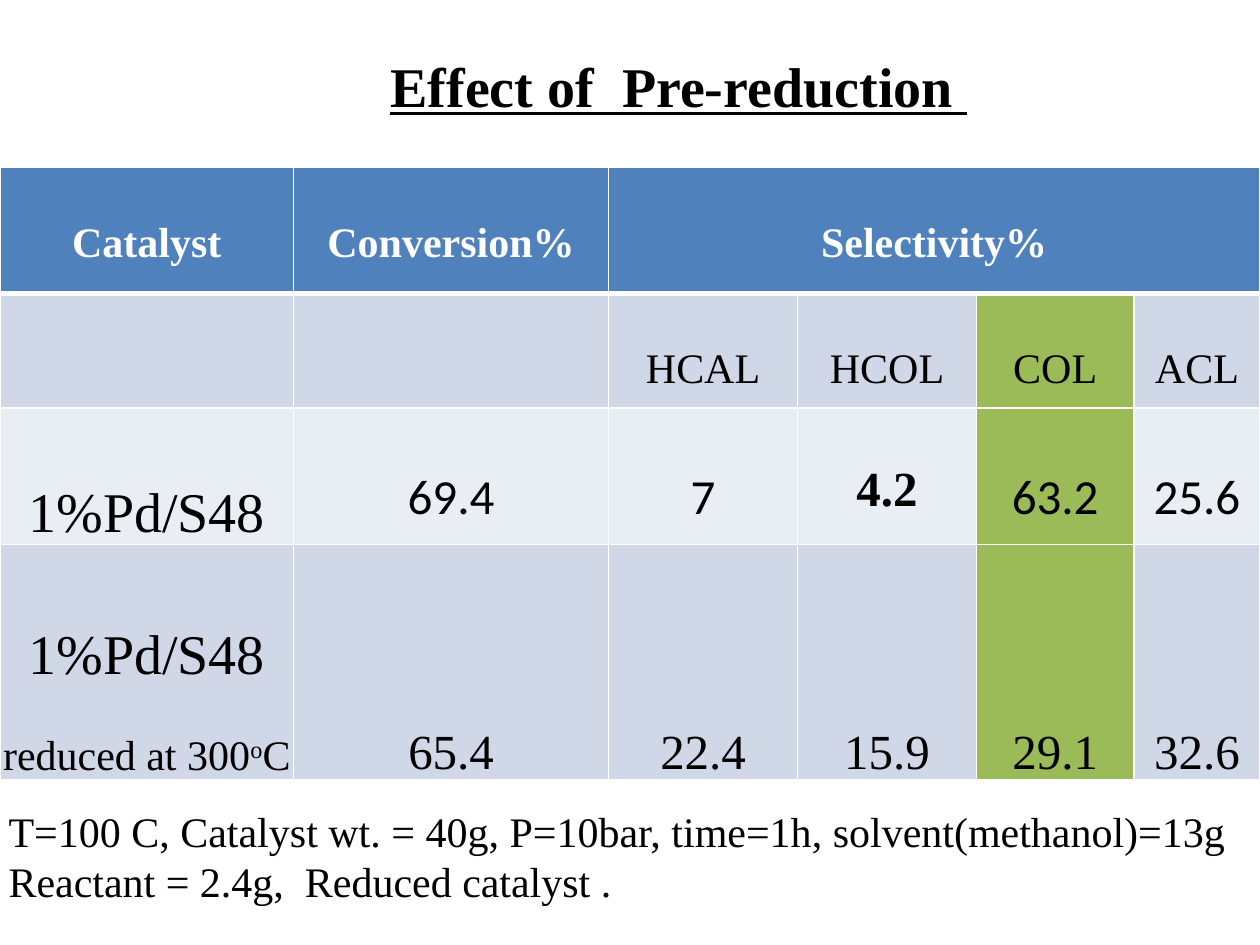
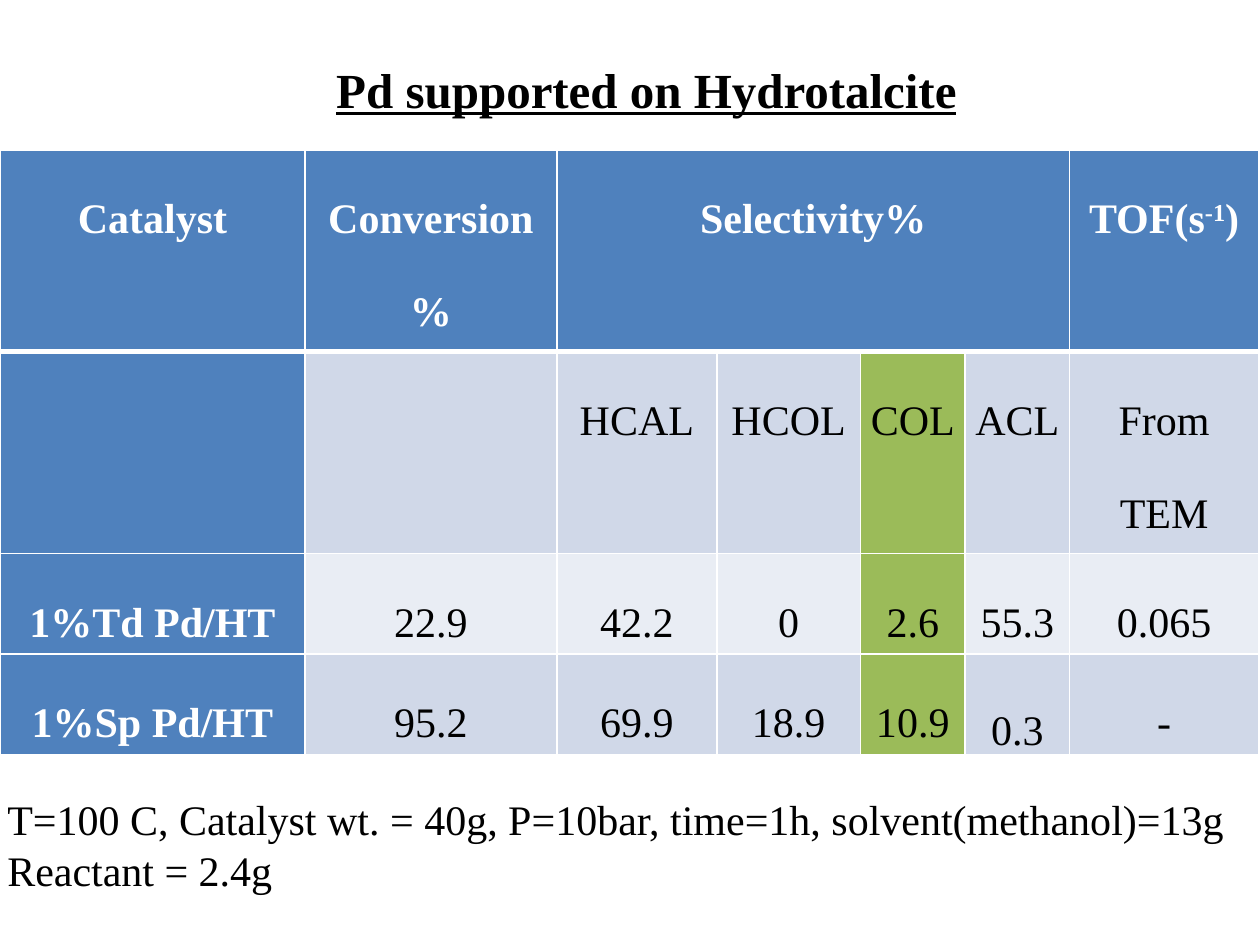
from lxml import etree
from pptx import Presentation
from pptx import util as u
from pptx.dml.color import RGBColor
from pptx.enum import text
from pptx.oxml.ns import qn

COLORS = {"header": "4F81BD", "band": "D0D8E8", "light": "E9EDF4",
          "highlight": "9BBB59", "white": "FFFFFF", "black": "000000"}
SERIF, SANS = "Times New Roman", "Calibri"
HIGHLIGHTED = "COL"
CATALYST = "1%Pd/S48"
CONDITIONS = "T=100 C, Catalyst wt. = 40g, P=10bar, time=1h, solvent(methanol)=13g"
TIGHT = (0.01, 0.01, 0.01, 0)
SIDES = (0.07, 0, 0.07, 0)
SPACED = {"after": 10}
PADDED = {"inset": SIDES}
BOTTOM = {"inset": TIGHT, "after": 10, "anchor": "b", "size": 28}

# A cell is a string, or a (content, format) pair. Content may be a list of
# (run, format) pairs. None marks a cell that the header to its left covers.
SLIDES = [
    {
        "title": ("Effect of  Pre-reduction ", 32, (3, 0.36, 4.82, 0.64)),
        "notes": ([CONDITIONS, "Reactant = 2.4g,  Reduced catalyst ."],
                  (-0.03, 6.34, 9.94, 0.91)),
        "top": 1.33,
        "columns": [2.33, 2.5, 1.5, 1.42, 1.25, 1],
        "heights": [1, 0.91, 1.08, 1.87],
        "row_formats": [SPACED, SPACED, {**PADDED, "size": 28, "font": SANS}, BOTTOM],
        "first_column_header": False,
        "rows": [
            ["Catalyst", "Conversion%", "Selectivity%", None, None, None],
            ["", "", "HCAL", "HCOL", "COL", "ACL"],
            [(CATALYST, {**BOTTOM, "size": 32, "font": SERIF}), "69.4", "7",
             ("4.2", {"font": SERIF, "bold": True}), "63.2", "25.6"],
            [[(CATALYST + " ", {"size": 32}), ("reduced at 300", {"size": 24}),
              ("o", {"size": 24, "raised": True}), ("C", {"size": 24})],
             "65.4", "22.4", "15.9", "29.1", "32.6"],
        ],
    },
    {
        "title": ("Pd supported on Hydrotalcite", 28, (2.57, 0.42, 5.18, 0.57)),
        "notes": ([CONDITIONS, "Reactant = 2.4g"], (-0.04, 6.25, 9.94, 0.91)),
        "top": 1.19,
        "columns": [2.42, 2, 1.27, 1.14, 0.83, 0.83, 1.5],
        "heights": [1.6, 1.6, 0.8, 0.8],
        "row_formats": [PADDED] * 4,
        "first_column_header": True,
        "rows": [
            ["Catalyst", "Conversion%", "Selectivity%", None, None, None,
             [("TOF(s", {}), ("-1", {"raised": True}), (")", {})]],
            ["", "", "HCAL", "HCOL", "COL", "ACL", "From TEM"],
            ["1%Td Pd/HT", "22.9", "42.2", "0", "2.6", "55.3", "0.065"],
            ["1%Sp Pd/HT", "95.2", "69.9", "18.9", "10.9", ("0.3", {"anchor": "b"}), "-"],
        ],
    },
]


def add_run(paragraph, words, size=24, font=SERIF, color="black", bold=False,
            underline=False, raised=False):
    run = paragraph.add_run()
    run.text = words
    run.font.size = u.Pt(size)
    run.font.name = font
    run.font.bold = bold
    run.font.underline = underline
    run.font.color.rgb = RGBColor.from_string(COLORS[color])
    if raised:
        run._r.get_or_add_rPr().set("baseline", "30000")


def add_text(slide, lines, place, **style):
    frame = slide.shapes.add_textbox(*map(u.Inches, place)).text_frame
    frame.word_wrap = False
    frame.auto_size = text.MSO_AUTO_SIZE.SHAPE_TO_FIT_TEXT
    for i, line in enumerate(lines):
        add_run(frame.add_paragraph() if i else frame.paragraphs[0], line, **style)


def set_borders(cell, **widths):
    properties = cell._tc.get_or_add_tcPr()
    for side in "LRTB":
        line = etree.SubElement(properties, qn(f"a:ln{side}"),
                                w=str(u.Pt(widths.get(side, 1))))
        fill = etree.SubElement(line, qn("a:solidFill"))
        etree.SubElement(fill, qn("a:srgbClr"), val=COLORS["white"])


def fill_cell(cell, content, inset=None, after=0, anchor="t", **style):
    if inset:
        (cell.margin_left, cell.margin_top,
         cell.margin_right, cell.margin_bottom) = map(u.Inches, inset)
    cell.vertical_anchor = (text.MSO_ANCHOR.BOTTOM if anchor == "b"
                            else text.MSO_ANCHOR.TOP)
    if not content:
        return
    paragraph = cell.text_frame.paragraphs[0]
    paragraph.alignment = text.PP_ALIGN.CENTER
    paragraph.line_spacing = 2.0
    paragraph.space_after = u.Pt(after)
    for words, changes in [(content, {})] if isinstance(content, str) else content:
        add_run(paragraph, words, **{**style, **changes})


def add_results(slide, data):
    rows, columns, heights = data["rows"], data["columns"], data["heights"]
    table = slide.shapes.add_table(
        len(rows), len(columns), 0, u.Inches(data["top"]),
        u.Inches(10), u.Inches(sum(heights))).table
    for column, width in zip(table.columns, columns):
        column.width = u.Inches(width)
    for row, height in zip(table.rows, heights):
        row.height = u.Inches(height)

    # The selectivity heading spans its four products
    covered = [c for c, content in enumerate(rows[0]) if content is None]
    table.cell(0, covered[0] - 1).merge(table.cell(0, covered[-1]))
    highlighted = rows[1].index(HIGHLIGHTED)

    for r, row in enumerate(rows):
        for c, entry in enumerate(row):
            cell = table.cell(r, c)
            header = r == 0 or (c == 0 and data["first_column_header"])
            set_borders(cell, T=3 if r == 1 else 1, B=3 if r == 0 else 1)
            shade = ("header" if header else "highlight" if c == highlighted
                     else "band" if r % 2 else "light")
            cell.fill.solid()
            cell.fill.fore_color.rgb = RGBColor.from_string(COLORS[shade])
            content, changes = entry if isinstance(entry, tuple) else (entry, {})
            base = {"bold": header, "color": "white" if header else "black"}
            fill_cell(cell, content, **{**base, **data["row_formats"][r], **changes})


def main():
    deck = Presentation()
    deck.slide_width, deck.slide_height = u.Inches(10), u.Inches(7.5)
    for data in SLIDES:
        slide = deck.slides.add_slide(deck.slide_layouts[6])
        add_results(slide, data)
        notes, place = data["notes"]
        add_text(slide, notes, place)
        title, size, place = data["title"]
        add_text(slide, [title], place, size=size, bold=True, underline=True)
    deck.save("out.pptx")


if __name__ == "__main__":
    main()
